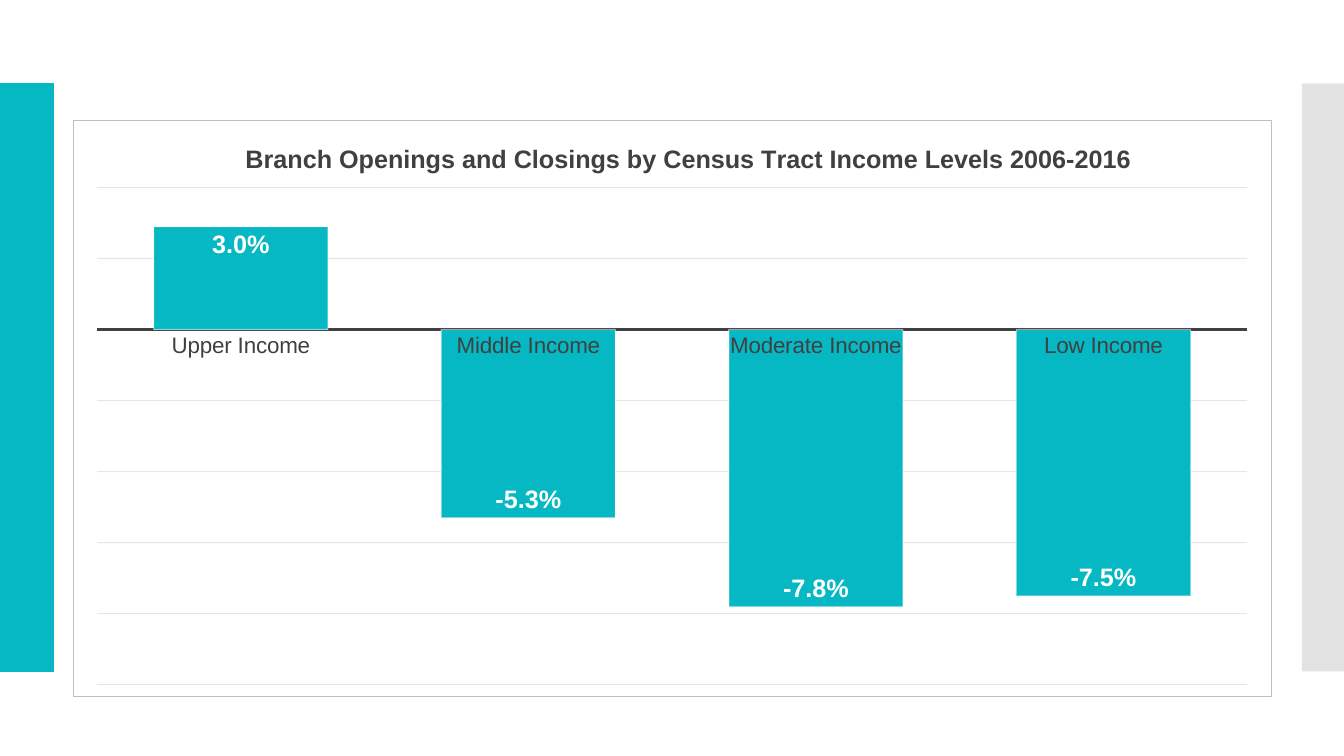
from dataclasses import dataclass

import lxml.etree
import pptx
import pptx.chart.data
import pptx.dml.color
import pptx.enum.chart
import pptx.enum.shapes
import pptx.oxml
import pptx.oxml.ns
import pptx.util
from pptx.util import Cm, Pt

TEAL, WHITE, INK = "06B8C3", "FFFFFF", "404040"
NS = ('xmlns:c="http://schemas.openxmlformats.org/drawingml/2006/chart" '
      'xmlns:a="http://schemas.openxmlformats.org/drawingml/2006/main"')
qn = pptx.oxml.ns.qn


@dataclass
class Band:
    left: float
    width: float
    color: str
    opacity: int
    outlined: bool


@dataclass
class Bar:
    tract: str
    value: float


BANDS = [
    Band(0, 1.35, TEAL, 100, True),
    Band(32.81, 1.06, "C8C8C8", 50, False),
]
BARS = [
    Bar("Upper Income", 0.029),
    Bar("Middle Income", -0.053),
    Bar("Moderate Income", -0.078),
    Bar("Low Income", -0.075),
]


def rgb(color: str):
    return pptx.dml.color.RGBColor.from_string(color)


def set_opacity(element, percent: int) -> None:
    """Make every RGB colour inside the element partly transparent."""
    for clr in element.iter(qn("a:srgbClr")):
        lxml.etree.SubElement(clr, qn("a:alpha")).set("val", str(percent * 1000))


def set_line(line, color: str, width: float) -> None:
    line.color.rgb = rgb(color)
    line.width = Pt(width)


def set_font(font, name: str, size: float, color: str, bold: bool = False) -> None:
    font.name, font.size, font.bold = name, Pt(size), bold
    font.color.rgb = rgb(color)


def add_band(slide, band: Band) -> None:
    s = slide.shapes.add_shape(pptx.enum.shapes.MSO_SHAPE.RECTANGLE,
                               Cm(band.left), Cm(2.1), Cm(band.width), Cm(14.82))
    s.shadow.inherit = False
    s.fill.solid()
    s.fill.fore_color.rgb = rgb(band.color)
    if band.opacity < 100:
        set_opacity(s._element.spPr, band.opacity)
    if band.outlined:
        set_line(s.line, band.color, 0.85)
    else:
        s.line.fill.background()


def place(parent, x: float, y: float, size: str = "", target: str = "") -> None:
    """Set a manual layout, in fractions of the chart area."""
    for old in parent.findall(qn("c:layout")):
        parent.remove(old)
    layout = pptx.oxml.parse_xml(
        f'<c:layout {NS}><c:manualLayout>{target}<c:xMode val="edge"/><c:yMode val="edge"/>'
        f'<c:x val="{x}"/><c:y val="{y}"/>{size}</c:manualLayout></c:layout>')
    text = parent.find(qn("c:tx"))
    parent.insert(0 if text is None else 1, layout)


def frame_chart(chart, fill: str, border: str) -> None:
    sp_pr = pptx.oxml.parse_xml(
        f'<c:spPr {NS}><a:solidFill><a:srgbClr val="{fill}"/></a:solidFill>'
        f'<a:ln w="{Pt(0.75)}"><a:solidFill><a:srgbClr val="{border}"/></a:solidFill></a:ln></c:spPr>')
    chart._chartSpace.find(qn("c:chart")).addnext(sp_pr)


def style_axes(chart) -> None:
    cat, val = chart.category_axis, chart.value_axis
    cat.major_tick_mark = pptx.enum.chart.XL_TICK_MARK.NONE
    cat.has_major_gridlines = False
    set_font(cat.tick_labels.font, "Arial", 16, INK)
    set_line(cat.format.line, INK, 1.5)
    val.minimum_scale, val.maximum_scale, val.major_unit = -0.1, 0.04, 0.02
    val.tick_labels.number_format = "0.0%"
    val.tick_labels.number_format_is_linked = False
    val.has_major_gridlines = True
    set_line(val.major_gridlines.format.line, "0D0D0D", 0.75)
    set_opacity(val._element.find(qn("c:majorGridlines")), 10)
    val.visible = False


def style_bars(plot) -> None:
    plot.gap_width = 65
    plot.vary_by_categories = False
    ser = plot.series[0]
    ser.invert_if_negative = False
    ser.format.fill.solid()
    ser.format.fill.fore_color.rgb = rgb(TEAL)
    set_line(ser.format.line, WHITE, 0.75)
    set_opacity(ser._element.spPr.find(qn("a:ln")), 50)

    inside_end = pptx.enum.chart.XL_LABEL_POSITION.INSIDE_END
    labels = ser.data_labels
    labels.show_value = True
    labels.number_format, labels.number_format_is_linked = "0.0%", False
    labels.position = inside_end
    set_font(labels.font, "Arial", 18, WHITE, True)

    # The first label is rounded up from its bar.
    upper = ser.points[0].data_label
    r = upper.text_frame.paragraphs[0].add_run()
    r.text = "3.0%"
    set_font(r.font, "Arial", 18, WHITE, True)
    upper.position = inside_end


def add_branch_chart(slide) -> None:
    data = pptx.chart.data.CategoryChartData(number_format="0.0%")
    data.categories = [bar.tract for bar in BARS]
    data.add_series("Series 1", [bar.value for bar in BARS])
    chart = slide.shapes.add_chart(pptx.enum.chart.XL_CHART_TYPE.COLUMN_CLUSTERED,
                                   Cm(1.83), Cm(3.03), Cm(30.22), Cm(14.53), data).chart
    set_font(chart.font, "Cabin", 10, "000000")
    frame_chart(chart, WHITE, "BFBFBF")
    chart.has_legend = False

    chart.has_title = True
    r = chart.chart_title.text_frame.paragraphs[0].add_run()
    r.text = "Branch Openings and Closings by Census Tract Income Levels 2006-2016"
    set_font(r.font, "Arial", 18, INK, True)
    chart.chart_title.include_in_layout = False
    place(chart.chart_title._element, 0.14, 0.03)

    style_axes(chart)
    style_bars(chart.plots[0])
    place(chart._chartSpace.chart.plotArea, 0.02, 0.116,
          '<c:w val="0.96"/><c:h val="0.864"/>', '<c:layoutTarget val="inner"/>')


def main() -> None:
    prs = pptx.Presentation()
    prs.slide_width, prs.slide_height = Cm(33.87), Cm(19.05)
    slide = prs.slides.add_slide(prs.slide_layouts[6])
    for band in BANDS:
        add_band(slide, band)
    add_branch_chart(slide)
    prs.save("out.pptx")


if __name__ == "__main__":
    main()
